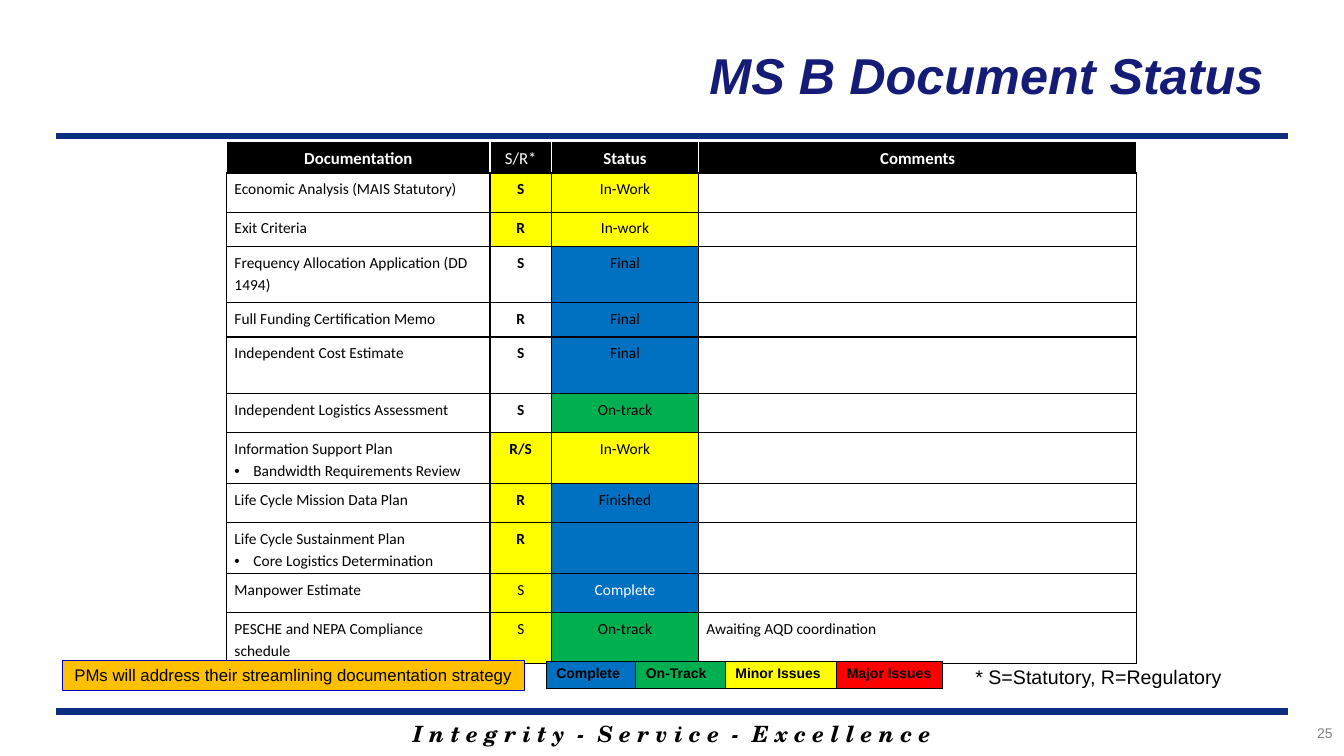
from lxml.etree import SubElement
from pptx import Presentation
from pptx.dml.color import RGBColor
from pptx.enum.shapes import MSO_CONNECTOR, MSO_SHAPE
from pptx.enum.text import MSO_ANCHOR, PP_ALIGN
from pptx.oxml.ns import qn
from pptx.util import Pt

BLACK = RGBColor(0x00, 0x00, 0x00)
WHITE = RGBColor(0xFF, 0xFF, 0xFF)
NAVY = RGBColor(0x15, 0x1C, 0x77)
RULE_BLUE = RGBColor(0x0C, 0x2D, 0x83)
BOX_BLUE = RGBColor(0x00, 0x00, 0xCC)
AMBER = RGBColor(0xFF, 0xC0, 0x00)
GREY = RGBColor(0x7F, 0x7F, 0x7F)
BLUE = RGBColor(0x00, 0x70, 0xC0)
GREEN = RGBColor(0x00, 0xB0, 0x50)
YELLOW = RGBColor(0xFF, 0xFF, 0x00)
RED = RGBColor(0xFF, 0x00, 0x00)

LEFT, CENTER, RIGHT = PP_ALIGN.LEFT, PP_ALIGN.CENTER, PP_ALIGN.RIGHT

HEADERS = ["Documentation", "S/R*", "Status", "Comments"]
COLUMNS = [188, 44, 105, 313]
HEADER_HEIGHT = 21
# height, document, sub-item, S/R, S/R fill, S/R bold, status, status fill, comment
DOCUMENTS = [
    (28, "Economic Analysis (MAIS Statutory)", "", "S", YELLOW, True, "In-Work", YELLOW, ""),
    (24.5, "Exit Criteria", "", "R", YELLOW, True, "In-work", YELLOW, ""),
    (40.3, "Frequency Allocation Application (DD 1494)", "", "S", None, True, "Final", BLUE, ""),
    (24.5, "Full Funding Certification Memo", "", "R", None, True, "Final", BLUE, ""),
    (40.3, "Independent Cost Estimate", "", "S", None, True, "Final", BLUE, ""),
    (28, "Independent Logistics Assessment", "", "S", None, True, "On-track", GREEN, ""),
    (34.6, "Information Support Plan", "Bandwidth Requirements Review",
     "R/S", YELLOW, True, "In-Work", YELLOW, ""),
    (28, "Life Cycle Mission Data Plan", "", "R", YELLOW, True, "Finished", BLUE, ""),
    (34.6, "Life Cycle Sustainment Plan", "Core Logistics Determination",
     "R", YELLOW, True, "", BLUE, ""),
    (28, "Manpower Estimate", "", "S", YELLOW, False, "Complete", BLUE, ""),
    (28, "PESCHE and NEPA Compliance schedule", "", "S", YELLOW, False,
     "On-track", GREEN, "Awaiting AQD coordination"),
]
LEGEND = [("Complete", BLUE, 64), ("On-Track", GREEN, 64),
          ("Minor Issues", YELLOW, 79.5), ("Major Issues", RED, 75.5)]


def add_run(p, text, size, color, font="Arial", bold=False, italic=False):
    r = p.add_run()
    r.text = text
    f = r.font
    f.name, f.size, f.bold, f.italic = font, Pt(size), bold, italic
    f.color.rgb = color


def add_text(s, box, text, size, color, align=CENTER, wrap=True, **style):
    tf = s.shapes.add_textbox(*map(Pt, box)).text_frame
    tf.word_wrap = wrap
    p = tf.paragraphs[0]
    p.alignment = align
    add_run(p, text, size, color, **style)


def add_rule(s, x1, x2, y):
    line = s.shapes.add_connector(MSO_CONNECTOR.STRAIGHT, Pt(x1), Pt(y), Pt(x2), Pt(y))
    line.line.color.rgb = RULE_BLUE
    line.line.width = Pt(4.5)
    SubElement(line._element.spPr, qn("a:effectLst"))


def style_cell(cell, fill, margins, edges=("000000",) * 4):
    """Set insets, edges (left, right, top, bottom) and fill of a cell."""
    side, end = map(Pt, margins)
    cell.margin_left = cell.margin_right = side
    cell.margin_top = cell.margin_bottom = end
    tcPr = cell._tc.get_or_add_tcPr()
    for tag, color in zip(("lnL", "lnR", "lnT", "lnB"), edges):
        ln = SubElement(tcPr, qn("a:" + tag), w=str(Pt(1)))
        SubElement(SubElement(ln, qn("a:solidFill")), qn("a:srgbClr"), val=color)
    if fill is None:
        cell.fill.background()
    else:
        cell.fill.solid()
        cell.fill.fore_color.rgb = fill


def add_plain_table(s, x, y, widths, heights):
    frame = s.shapes.add_table(len(heights), len(widths), Pt(x), Pt(y),
                               Pt(sum(widths)), Pt(sum(heights)))
    table = frame.table
    table.first_row = table.horz_banding = False
    for column, width in zip(table.columns, widths):
        column.width = Pt(width)
    for row, height in zip(table.rows, heights):
        row.height = Pt(height)
    return table


def add_bullet(p):
    pPr = p._p.get_or_add_pPr()
    pPr.set("marL", str(Pt(13.5)))
    pPr.set("indent", str(Pt(-13.5)))
    SubElement(pPr, qn("a:buFont"), typeface="Arial")
    SubElement(pPr, qn("a:buChar"), char="•")


def fill_cell(cell, text, align=LEFT, fill=None, color=BLACK, bold=False, sub_item=""):
    style_cell(cell, fill, (5.5, 3))
    p = cell.text_frame.paragraphs[0]
    p.alignment, p.line_spacing = align, 1.15
    if text:
        add_run(p, text, 11, color, "Calibri", bold)
    else:
        SubElement(p._p, qn("a:endParaRPr"), sz="1100")
    if sub_item:
        p = cell.text_frame.add_paragraph()
        p.line_spacing = 1.15
        add_bullet(p)
        add_run(p, sub_item, 11, color, "Calibri")


def add_status_table(s, x, y):
    heights = [HEADER_HEIGHT] + [document[0] for document in DOCUMENTS]
    table = add_plain_table(s, x, y, COLUMNS, heights)
    for i, header in enumerate(HEADERS):
        cell = table.cell(0, i)
        style_cell(cell, BLACK, (5.5, 3), ("FFFFFF", "FFFFFF", "FFFFFF", "000000"))
        p = cell.text_frame.paragraphs[0]
        p.alignment, p.line_spacing, p.space_after = CENTER, 1.15, Pt(10)
        add_run(p, header, 12, WHITE, "Calibri", bold=header != "S/R*")
    for i, document in enumerate(DOCUMENTS, 1):
        _, name, sub_item, kind, kind_fill, bold, status, status_fill, comment = document
        fill_cell(table.cell(i, 0), name, sub_item=sub_item)
        fill_cell(table.cell(i, 1), kind, CENTER, kind_fill, bold=bold)
        fill_cell(table.cell(i, 2), status, CENTER, status_fill,
                  WHITE if status == "Complete" else BLACK)
        fill_cell(table.cell(i, 3), comment)


def add_legend(s, x, y, height):
    table = add_plain_table(s, x, y, [width for _, _, width in LEGEND], [height])
    for i, (label, fill, _) in enumerate(LEGEND):
        cell = table.cell(0, i)
        style_cell(cell, fill, (7.2, 3.6))
        add_run(cell.text_frame.paragraphs[0], label, 10, BLACK, bold=True)


def add_strategy_box(s, box):
    sp = s.shapes.add_shape(MSO_SHAPE.RECTANGLE, *map(Pt, box))
    sp.shadow.inherit = False
    sp.fill.solid()
    sp.fill.fore_color.rgb = AMBER
    sp.line.color.rgb = BOX_BLUE
    sp.line.width = Pt(0.75)
    tf = sp.text_frame
    tf.word_wrap = False
    tf.vertical_anchor = MSO_ANCHOR.TOP
    p = tf.paragraphs[0]
    p.alignment = CENTER
    add_run(p, "PMs will address their streamlining documentation strategy", 12, BLACK)


def set_title(s, box, text):
    title = s.shapes.title
    title.left, title.top, title.width, title.height = map(Pt, box)
    tf = title.text_frame
    tf.vertical_anchor = MSO_ANCHOR.MIDDLE
    p = tf.paragraphs[0]
    p.alignment = RIGHT
    add_run(p, text, 36, NAVY, bold=True, italic=True)


def build_status_slide(prs):
    s = prs.slides.add_slide(prs.slide_layouts[5])
    add_text(s, (136, 511, 688, 26.5),
             "I n t e g r i t y  -  S e r v i c e  -  E x c e l l e n c e",
             16, BLACK, font="TeX Gyre Schola", bold=True, italic=True)
    for y in (508.3, 97.2):
        add_rule(s, 40, 920, y)
    set_title(s, (334, 11.5, 586, 83.5), "MS B Document Status ")
    add_status_table(s, 162, 101)
    add_text(s, (689, 471.6, 191.5, 24.5), "* S=Statutory, R=Regulatory", 14, BLACK, wrap=False)
    add_legend(s, 390.2, 472.3, 19.5)
    add_strategy_box(s, (44.6, 471.6, 329.8, 21.6))
    add_text(s, (839, 514, 120, 24), "25", 10, GREY, RIGHT)


def main():
    prs = Presentation()
    prs.slide_width, prs.slide_height = Pt(960), Pt(540)
    build_status_slide(prs)
    prs.save("out.pptx")


if __name__ == "__main__":
    main()
